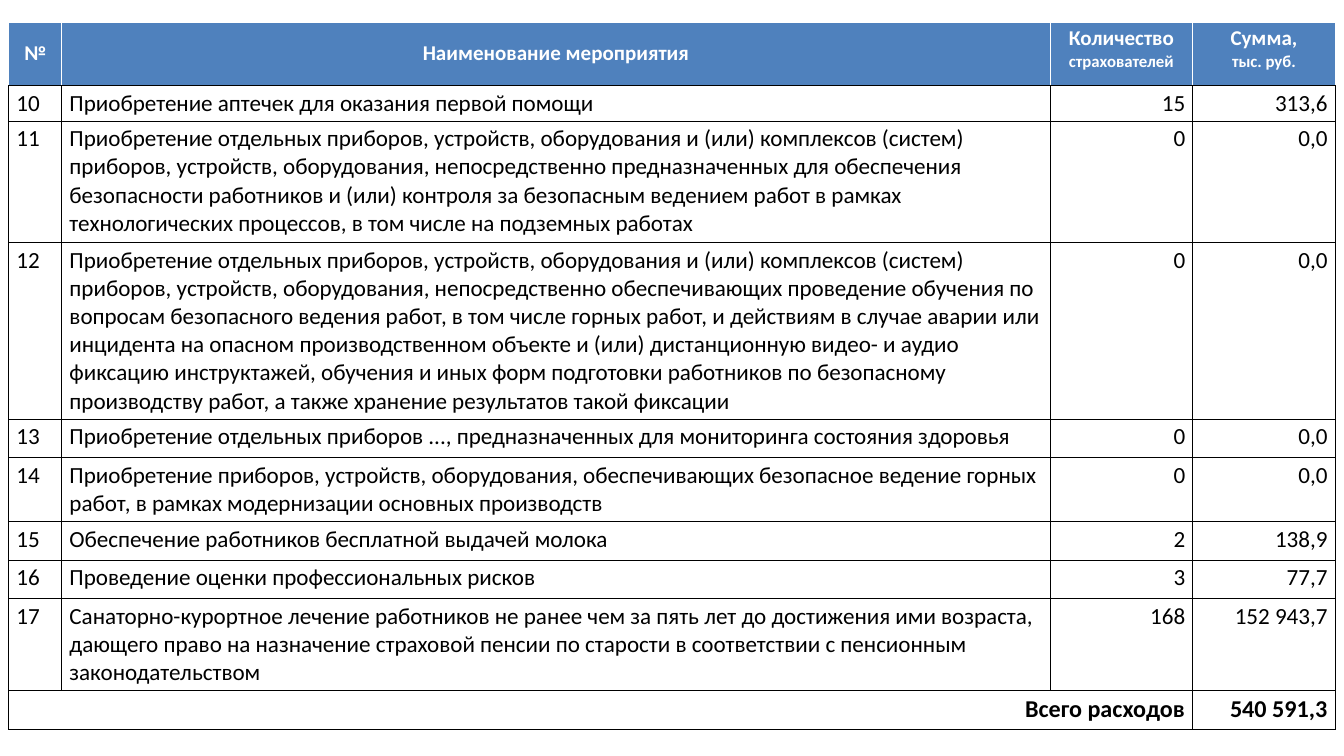
import lxml.etree
import pptx
import pptx.dml.color
import pptx.enum.text
import pptx.oxml.ns
import pptx.util

Cm = pptx.util.Cm
Pt = pptx.util.Pt
ALIGN = pptx.enum.text.PP_ALIGN
ANCHOR = pptx.enum.text.MSO_ANCHOR

COLUMN_WIDTHS = [1.78, 33.2, 4.8, 4.78]
ROW_HEIGHTS = [2.13, 0.89, 4.09, 2.34] + [1.3] * 6
HEADERS = [
    [("№", 20)],
    [("Наименование мероприятия", 20)],
    [("Количество", 20), ("страхователей", 16)],
    [("Сумма,", 20), ("тыс. руб.", 16)],
]
MEASURES = [
    ("10", "Приобретение аптечек для оказания первой помощи", "15", "313,6"),
    ("11", "Приобретение отдельных приборов, устройств, оборудования и (или) комплексов (систем) "
     "приборов, устройств, оборудования, непосредственно предназначенных для обеспечения "
     "безопасности работников и (или) контроля за безопасным ведением работ в рамках "
     "технологических процессов, в том числе на подземных работах", "0", "0,0"),
    ("12", "Приобретение отдельных приборов, устройств, оборудования и (или) комплексов (систем) "
     "приборов, устройств, оборудования, непосредственно обеспечивающих проведение обучения по "
     "вопросам безопасного ведения работ, в том числе горных работ, и действиям в случае аварии или "
     "инцидента на опасном производственном объекте и (или) дистанционную видео- и аудио "
     "фиксацию инструктажей, обучения и иных форм подготовки работников по безопасному "
     "производству работ, а также хранение результатов такой фиксации", "0", "0,0"),
    ("13", "Приобретение отдельных приборов ..., предназначенных для мониторинга состояния здоровья",
     "0", "0,0"),
    ("14", "Приобретение приборов, устройств, оборудования, обеспечивающих безопасное ведение горных "
     "работ, в рамках модернизации основных производств", "0", "0,0"),
    ("15", "Обеспечение работников бесплатной выдачей молока", "2", "138,9"),
    ("16", "Проведение оценки профессиональных рисков", "3", "77,7"),
    ("17", "Санаторно-курортное лечение работников не ранее чем за пять лет до достижения ими возраста, "
     "дающего право на назначение страховой пенсии по старости в соответствии с пенсионным "
     "законодательством", "168", "152 943,7"),
]
MEASURE_ALIGNMENTS = [ALIGN.LEFT, ALIGN.LEFT, ALIGN.RIGHT, ALIGN.RIGHT]


def color(value):
    return pptx.dml.color.RGBColor.from_string(value)


class SlideBuilder:
    """Holds the table style and the slide being built."""

    font = "Calibri"
    header_fill = "4F81BD"
    light = "FFFFFF"
    dark = "000000"

    def __init__(self, slide):
        self.slide = slide

    def table(self, left, top, widths, heights):
        shape = self.slide.shapes.add_table(
            len(heights), len(widths), Cm(left), Cm(top), Cm(sum(widths)), Cm(sum(heights)))
        table = shape.table
        table.first_row = table.horz_banding = False
        for column, width in zip(table.columns, widths):
            column.width = Cm(width)
        for row, height in zip(table.rows, heights):
            row.height = Cm(height)
        return table

    def borders(self, cell, side_color, bottom_color):
        properties = cell._tc.get_or_add_tcPr()
        qn = pptx.oxml.ns.qn
        for side in "LRTB":
            line = lxml.etree.SubElement(properties, qn(f"a:ln{side}"), w=str(Pt(1)))
            fill = lxml.etree.SubElement(line, qn("a:solidFill"))
            value = bottom_color if side == "B" else side_color
            lxml.etree.SubElement(fill, qn("a:srgbClr"), val=value)

    def text(self, cell, lines, alignment, text_color, bold):
        frame = cell.text_frame
        for index, (text, size) in enumerate(lines):
            paragraph = frame.add_paragraph() if index else frame.paragraphs[0]
            paragraph.alignment = alignment
            run = paragraph.add_run()
            run.text = text
            run.font.name = self.font
            run.font.size = Pt(size)
            run.font.bold = bold
            run.font.color.rgb = color(text_color)

    def header_cell(self, cell, lines):
        self.borders(cell, self.light, self.dark)
        cell.fill.solid()
        cell.fill.fore_color.rgb = color(self.header_fill)
        cell.vertical_anchor = ANCHOR.MIDDLE if len(lines) == 1 else ANCHOR.TOP
        self.text(cell, lines, ALIGN.CENTER, self.light, True)

    def body_cell(self, cell, text, alignment, size=22, bold=False):
        self.borders(cell, self.dark, self.dark)
        cell.fill.background()
        if text:
            self.text(cell, [(text, size)], alignment, self.dark, bold)


def main():
    presentation = pptx.Presentation()
    presentation.slide_width = Cm(45.16)
    presentation.slide_height = Cm(25.4)
    builder = SlideBuilder(presentation.slides.add_slide(presentation.slide_layouts[6]))
    table = builder.table(0.3, 0.74, COLUMN_WIDTHS, ROW_HEIGHTS)

    for column, lines in enumerate(HEADERS):
        builder.header_cell(table.cell(0, column), lines)
    for row, measure in enumerate(MEASURES, start=1):
        for column, (text, alignment) in enumerate(zip(measure, MEASURE_ALIGNMENTS)):
            builder.body_cell(table.cell(row, column), text, alignment)

    total_row = len(ROW_HEIGHTS) - 1
    table.cell(total_row, 0).merge(table.cell(total_row, 2))
    for column, text in enumerate(["Всего расходов", "", "", "540 591,3"]):
        builder.body_cell(table.cell(total_row, column), text, ALIGN.RIGHT, 23, True)

    presentation.save("out.pptx")


if __name__ == "__main__":
    main()
